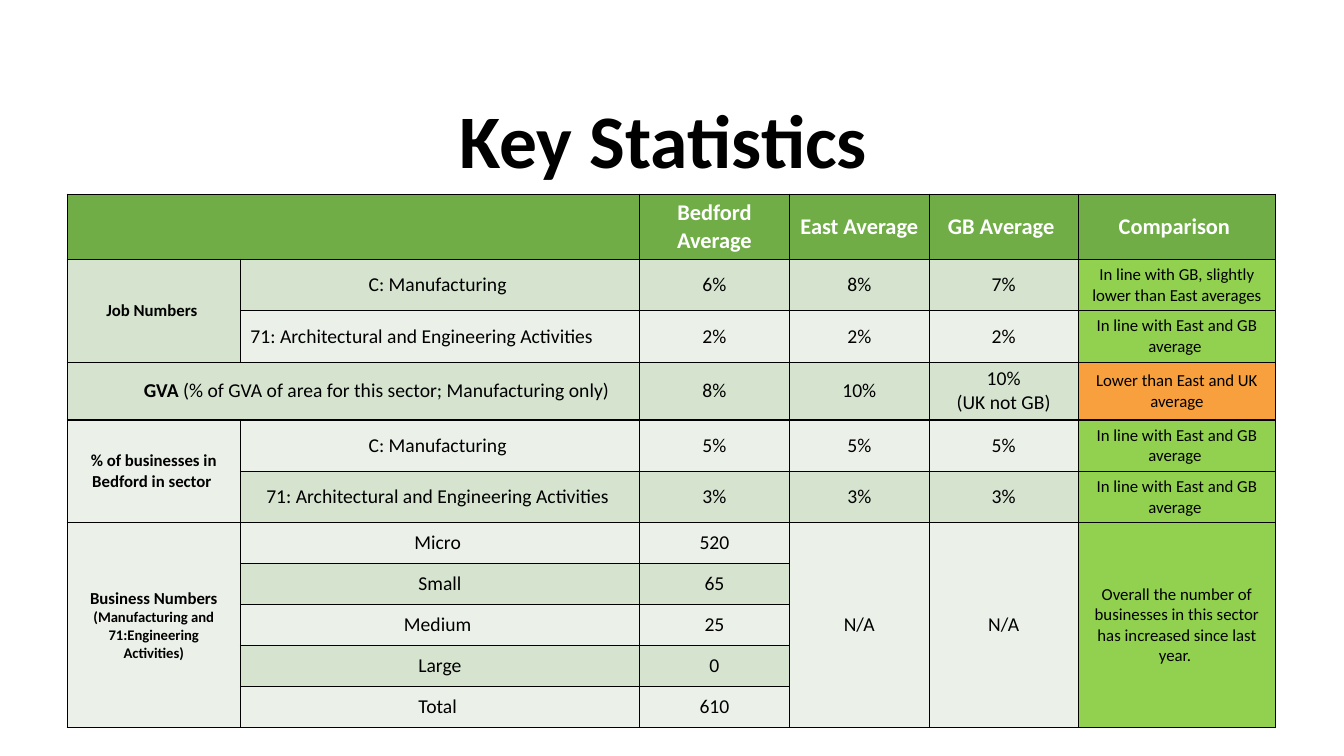
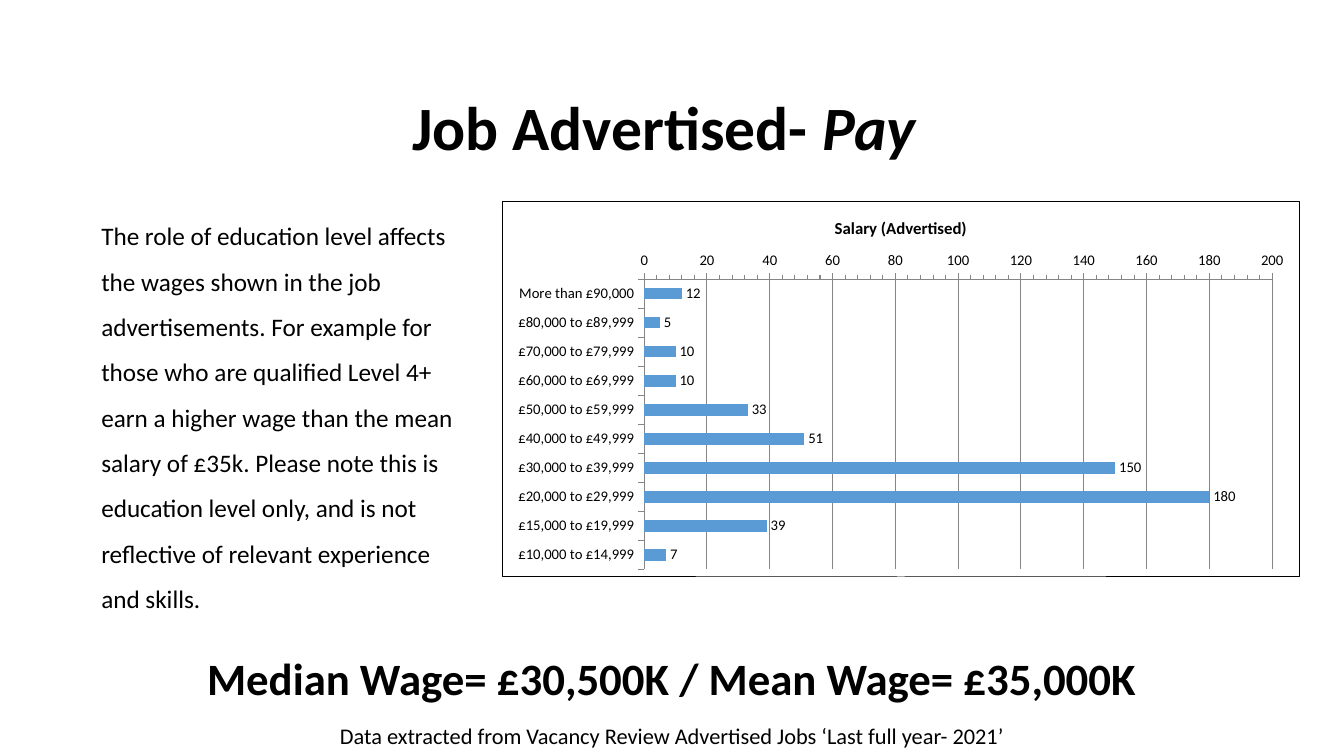
from dataclasses import dataclass

import lxml.etree
import pptx
import pptx.chart.data
import pptx.dml.color
import pptx.enum.chart
import pptx.enum.text
import pptx.oxml
import pptx.oxml.ns
import pptx.util

PX = 9525
FONT = "Calibri"
RGBColor = pptx.dml.color.RGBColor
BLACK = RGBColor(0x00, 0x00, 0x00)
WHITE = RGBColor(0xFF, 0xFF, 0xFF)
GREEN = RGBColor(0x70, 0xAD, 0x47)
PALE = RGBColor(0xEB, 0xF1, 0xE9)
TINT = RGBColor(0xD5, 0xE3, 0xCF)
LIME = RGBColor(0x92, 0xD0, 0x50)
ORANGE = RGBColor(0xF8, 0x9F, 0x3E)
BLUE = RGBColor(0x5B, 0x9B, 0xD5)
GREY = RGBColor(0x86, 0x86, 0x86)
LEFT = pptx.enum.text.PP_ALIGN.LEFT
CENTER = pptx.enum.text.PP_ALIGN.CENTER
TOP = pptx.enum.text.MSO_ANCHOR.TOP
MIDDLE = pptx.enum.text.MSO_ANCHOR.MIDDLE


@dataclass(frozen=True)
class Span:
    text: str
    size: float
    bold: bool = False
    italic: bool = False
    color: RGBColor = BLACK


@dataclass(frozen=True)
class Para:
    spans: tuple[Span, ...]
    align: pptx.enum.text.PP_ALIGN = CENTER
    spacing: float = 1.0


@dataclass(frozen=True)
class Area:
    left: int
    top: int
    width: int
    height: int

    def emu(self) -> tuple[int, ...]:
        return tuple(value * PX for value in (self.left, self.top, self.width, self.height))


@dataclass(frozen=True)
class Cell:
    row: int
    column: int
    fill: RGBColor
    paras: tuple[Para, ...] = ()
    rows: int = 1
    columns: int = 1
    indent: int = 0


@dataclass(frozen=True)
class Band:
    row: int
    sector: str
    averages: tuple[str, ...]
    verdict: str
    fill: RGBColor
    verdict_fill: RGBColor = LIME
    align: pptx.enum.text.PP_ALIGN = CENTER


COLUMNS = (165, 380, 143, 133, 142, 188)
ROWS = (62, 49, 49, 55, 49, 49) + (39,) * 5
HEADINGS = ("Bedford Average", "East Average ", "GB Average ", "Comparison ")
IN_LINE = "In line with East and GB average "
MANUFACTURING = "C: Manufacturing "
ENGINEERING = "71: Architectural and Engineering Activities"
BANDS = (
    Band(1, MANUFACTURING, ("6%", "8%", "7%"),
         "In line with GB, slightly lower than East averages", TINT),
    Band(2, ENGINEERING, ("2%",) * 3, IN_LINE, PALE, align=LEFT),
    Band(3, "", ("8%", "10%", "10%\n(UK not GB)"),
         "Lower than East and UK average", TINT, ORANGE),
    Band(4, MANUFACTURING, ("5%",) * 3, IN_LINE, PALE),
    Band(5, ENGINEERING + " ", ("3%",) * 3, IN_LINE, TINT),
)
SIZES = (("Micro ", "520"), ("Small", "65"), ("Medium ", "25"), ("Large", "0"), ("Total ", "610"))
SALARIES = {
    "More than £90,000": 12,
    "£80,000 to £89,999": 5,
    "£70,000 to £79,999": 10,
    "£60,000 to £69,999": 10,
    "£50,000 to £59,999": 33,
    "£40,000 to £49,999": 51,
    "£30,000 to £39,999": 150,
    "£20,000 to £29,999": 180,
    "£15,000 to £19,999": 39,
    "£10,000 to £14,999": 7,
}
PAY_NOTE = (
    "The role of education level affects the wages shown in the job advertisements. "
    "For example for those who are qualified Level 4+ earn a higher wage than the mean "
    "salary of £35k. Please note this is education level only, and is not reflective of "
    "relevant experience and skills."
)


def write_paras(frame: pptx.text.text.TextFrame, paras: tuple[Para, ...]) -> None:
    for index, item in enumerate(paras):
        para = frame.add_paragraph() if index else frame.paragraphs[0]
        para.alignment = item.align
        para.line_spacing = item.spacing
        for part in item.spans:
            span = para.add_run()
            span.text = part.text
            span.font.name = FONT
            span.font.size = pptx.util.Pt(part.size)
            span.font.bold = part.bold
            span.font.italic = part.italic
            span.font.color.rgb = part.color


def add_text(page: pptx.slide.Slide, area: Area, para: Para,
             anchor: pptx.enum.text.MSO_ANCHOR = TOP) -> None:
    frame = page.shapes.add_textbox(*area.emu()).text_frame
    frame.word_wrap = True
    frame.vertical_anchor = anchor
    write_paras(frame, (para,))


def add_title(page: pptx.slide.Slide, area: Area, *spans: Span) -> None:
    add_text(page, area, Para(spans, spacing=0.9), MIDDLE)


def line_xml(tag: str, points: float) -> lxml.etree.ElementBase:
    return pptx.oxml.parse_xml(
        f'<a:{tag} {pptx.oxml.ns.nsdecls("a")} w="{pptx.util.Pt(points)}">'
        f'<a:solidFill><a:srgbClr val="{BLACK}"/></a:solidFill></a:{tag}>'
    )


def plain(text: str, size: float = 14, bold: bool = False, color: RGBColor = BLACK,
          align: pptx.enum.text.PP_ALIGN = CENTER) -> tuple[Para, ...]:
    return tuple(Para((Span(line, size, bold, color=color),), align) for line in text.split("\n"))


def statistic_cells() -> list[Cell]:
    cells = [Cell(0, 0, GREEN, columns=2)]
    cells += [Cell(0, column, GREEN, plain(text, 16, True, WHITE))
              for column, text in enumerate(HEADINGS, 2)]
    cells += [
        Cell(1, 0, TINT, plain("Job Numbers ", 12, True), rows=2),
        Cell(3, 0, TINT, (Para((
            Span("GVA ", 14, True),
            Span("(% of GVA of area for this sector; Manufacturing only)", 14),
        ), LEFT),), columns=2, indent=73),
        Cell(4, 0, PALE, plain("% of businesses in Bedford in sector ", 12, True), rows=2),
        Cell(6, 0, PALE, (Para((
            Span("Business Numbers ", 12, True),
            Span("(Manufacturing and 71:Engineering Activities)", 10.5, True),
        )),), rows=5),
        Cell(6, 5, LIME, plain("Overall the number of businesses in this sector "
                               "has increased since last year. ", 12), rows=5),
    ]
    cells += [Cell(6, column, PALE, plain("N/A"), rows=5) for column in (3, 4)]
    for band in BANDS:
        if band.sector:
            cells.append(Cell(band.row, 1, band.fill, plain(band.sector, align=band.align)))
        cells += [Cell(band.row, column, band.fill, plain(text))
                  for column, text in enumerate(band.averages, 2)]
        cells.append(Cell(band.row, 5, band.verdict_fill, plain(band.verdict, 12)))
    for row, pair in enumerate(SIZES, 6):
        fill = TINT if row % 2 else PALE
        cells += [Cell(row, column, fill, plain(text)) for column, text in enumerate(pair, 1)]
    return cells


def add_statistics(page: pptx.slide.Slide) -> None:
    area = Area(64, 185, sum(COLUMNS), sum(ROWS))
    table = page.shapes.add_table(len(ROWS), len(COLUMNS), *area.emu()).table
    for column, width in zip(table.columns, COLUMNS):
        column.width = width * PX
    for row, height in zip(table.rows, ROWS):
        row.height = height * PX
    for item in statistic_cells():
        cell = table.cell(item.row, item.column)
        if item.rows * item.columns > 1:
            cell.merge(table.cell(item.row + item.rows - 1, item.column + item.columns - 1))
        cell.vertical_anchor = MIDDLE
        if item.indent:
            cell.margin_left = item.indent * PX
        write_paras(cell.text_frame, item.paras)
        for row in range(item.row, item.row + item.rows):
            for column in range(item.column, item.column + item.columns):
                covered = table.cell(row, column)
                covered.fill.solid()
                covered.fill.fore_color.rgb = item.fill
                properties = covered._tc.get_or_add_tcPr()
                for index, tag in enumerate(("lnL", "lnR", "lnT", "lnB")):
                    properties.insert(index, line_xml(tag, 1))


def add_salary_chart(page: pptx.slide.Slide, area: Area) -> None:
    data = pptx.chart.data.CategoryChartData(number_format="#,##0")
    data.categories = list(SALARIES)
    data.add_series("Series 1", list(SALARIES.values()))
    chart = page.shapes.add_chart(
        pptx.enum.chart.XL_CHART_TYPE.BAR_CLUSTERED, *area.emu(), data).chart
    chart.font.name = FONT
    chart.font.size = pptx.util.Pt(10.5)
    chart.font.color.rgb = BLACK
    chart.has_legend = False
    chart.has_title = True
    write_paras(chart.chart_title.text_frame, plain("Salary (Advertised)", 12, True))

    plot = chart.plots[0]
    plot.gap_width = 150
    plot.vary_by_categories = False
    fill = plot.series[0].format.fill
    fill.solid()
    fill.fore_color.rgb = BLUE
    plot.has_data_labels = True
    labels = plot.data_labels
    labels.show_value = True
    labels.number_format = "#,##0"
    labels.number_format_is_linked = False
    labels.position = pptx.enum.chart.XL_LABEL_POSITION.OUTSIDE_END

    ticks = pptx.enum.chart.XL_TICK_MARK
    bands, counts = chart.category_axis, chart.value_axis
    bands.reverse_order = True
    bands.major_tick_mark = ticks.OUTSIDE
    counts.minimum_scale, counts.maximum_scale = 0, 200
    counts.major_unit, counts.minor_unit = 20, 4
    counts.major_tick_mark = ticks.CROSS
    counts.minor_tick_mark = ticks.OUTSIDE
    counts.tick_labels.number_format = "#,##0"
    counts.tick_labels.number_format_is_linked = False
    counts.has_major_gridlines = True
    for line in (bands.format.line, counts.format.line, counts.major_gridlines.format.line):
        line.color.rgb = GREY
        line.width = pptx.util.Pt(0.75)

    frame = pptx.oxml.parse_xml(f'<c:spPr {pptx.oxml.ns.nsdecls("c")}/>')
    frame.append(line_xml("ln", 0.75))
    chart.element.find(pptx.oxml.ns.qn("c:txPr")).addprevious(frame)


def main() -> None:
    deck = pptx.Presentation()
    deck.slide_width, deck.slide_height = 1280 * PX, 720 * PX
    blank = deck.slide_layouts[6]

    page = deck.slides.add_slide(blank)
    add_title(page, Area(0, 68, 1280, 139), Span("Key Statistics ", 54, True))
    add_statistics(page)

    page = deck.slides.add_slide(blank)
    add_title(page, Area(87, 55, 1104, 139),
              Span("Job Advertised- ", 44, True), Span("Pay ", 44, True, True))
    add_text(page, Area(0, 615, 1280, 107),
             Para((Span("Median Wage= £30,500K / Mean Wage= £35,000K", 32, True),)))
    add_text(page, Area(87, 191, 373, 402), Para((Span(PAY_NOTE, 18),), LEFT, 1.5))
    add_salary_chart(page, Area(478, 191, 760, 359))
    add_text(page, Area(0, 683, 1280, 36), Para((Span(
        "Data extracted from Vacancy Review Advertised Jobs ‘Last full year- 2021’", 16),)))

    deck.save("out.pptx")


if __name__ == "__main__":
    main()
